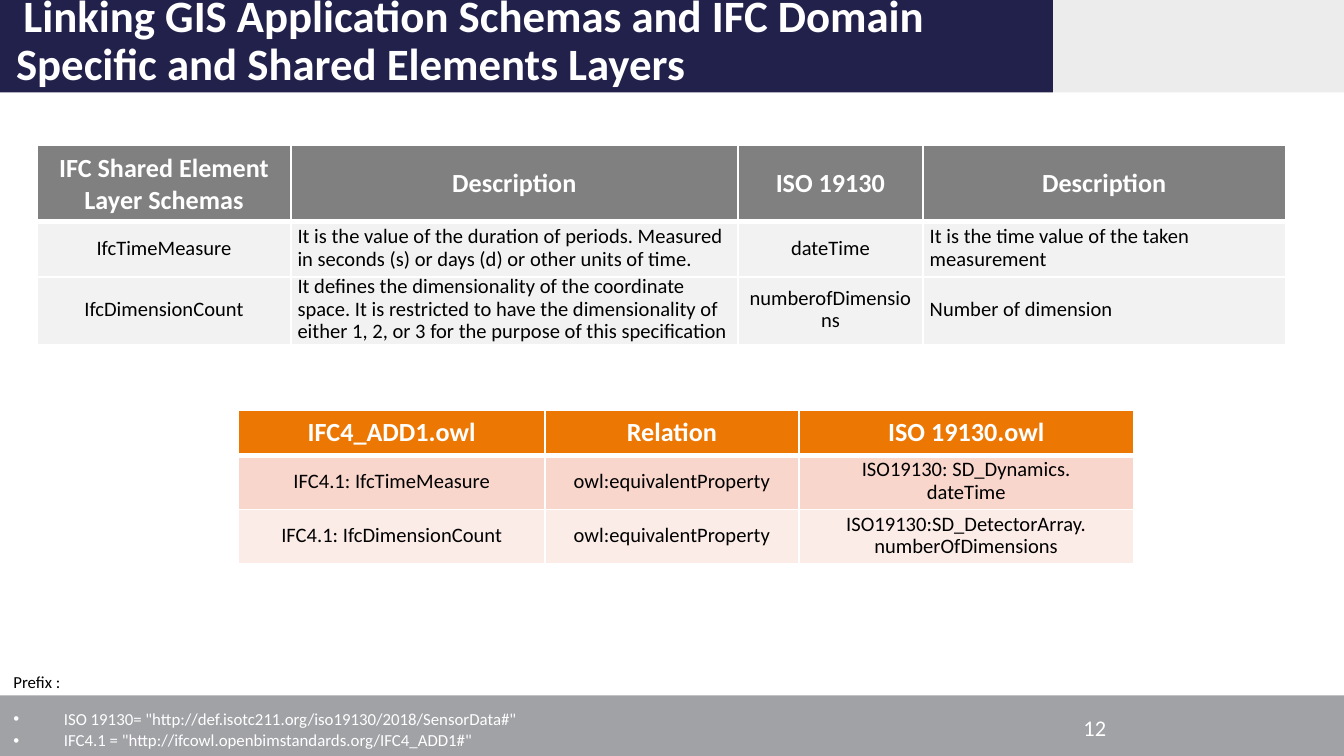
from lxml.etree import SubElement
from pptx import Presentation
from pptx.dml.color import RGBColor
from pptx.enum.shapes import MSO_SHAPE as Shape
from pptx.enum.text import MSO_ANCHOR as Anchor, MSO_AUTO_SIZE as AutoSize, PP_ALIGN as Align
from pptx.oxml.ns import qn
from pptx.util import Pt

COLORS = {
    "navy": "22214B", "pale": "ECECED", "footer": "A1A2A6", "white": "FFFFFF", "black": "000000",
    "gray": "808080", "light": "F2F2F2", "orange": "ED7703", "peach": "F8D6CC", "blush": "FCECE7",
}
FONT = "Calibri"
BANDS = [
    ((0, 372.5, 720, 32.5), "footer"),
    ((0, 0, 564, 49.5), "navy"),
    ((564, 0, 156, 49.5), "pale"),
]
SCHEMA_ROWS = [
    ["IFC Shared Element Layer Schemas", "Description", "ISO 19130", "Description"],
    ["IfcTimeMeasure",
     "It is the value of the duration of periods. Measured in seconds (s) or days (d) or other units of time.",
     "dateTime", "It is the time value of the taken measurement"],
    ["IfcDimensionCount",
     "It defines the dimensionality of the coordinate space. It is restricted to have the dimensionality "
     "of either 1, 2, or 3 for the purpose of this specification",
     "numberofDimensions", "Number of dimension"],
]
RELATION_ROWS = [
    ["IFC4_ADD1.owl", "Relation", "ISO 19130.owl"],
    ["IFC4.1: IfcTimeMeasure", "owl:equivalentProperty", "ISO19130: SD_Dynamics.\vdateTime"],
    ["IFC4.1: IfcDimensionCount", "owl:equivalentProperty",
     "ISO19130:SD_DetectorArray.\vnumberOfDimensions"],
]
PREFIXES = [
    "Prefix :",
    'ISO 19130= "http://def.isotc211.org/iso19130/2018/SensorData#"',
    'IFC4.1 = "http://ifcowl.openbimstandards.org/IFC4_ADD1#"',
]


def rgb(name):
    """Return the named palette colour."""
    return RGBColor.from_string(COLORS[name])


def style(para, size, color, bold=False, align=Align.LEFT):
    """Set the font and alignment of a paragraph."""
    para.alignment = align
    para.font.name, para.font.size, para.font.bold = FONT, Pt(size), bold
    para.font.color.rgb = rgb(color)


def place(shape, box):
    """Move a shape into a box of left, top, width and height."""
    shape.left, shape.top, shape.width, shape.height = map(Pt, box)


def add_bands(page, bands):
    """Lay the coloured bands behind everything else."""
    for box, color in bands:
        band = page.shapes.add_shape(Shape.RECTANGLE, *map(Pt, box))
        band.shadow.inherit = False
        band.fill.solid()
        band.fill.fore_color.rgb = rgb(color)
        band.line.fill.background()
        page.shapes.element.insert(2, band.element)


def fill_title(page, box, text):
    """Write the slide title in its placeholder, both lines inside the band."""
    title = page.shapes.title
    place(title, box)
    frame = title.text_frame
    frame.text = text
    frame.word_wrap, frame.auto_size = True, AutoSize.NONE
    frame.vertical_anchor = Anchor.MIDDLE
    frame.margin_left, frame.margin_top = 0, Pt(3.6)
    frame.margin_right, frame.margin_bottom = Pt(7.2), Pt(27.6)
    para = frame.paragraphs[0]
    properties = para._p.get_or_add_pPr()
    properties.set("marL", "0")
    properties.set("indent", str(Pt(4)))
    para.line_spacing = 0.9
    style(para, 24, "white", bold=True)


def add_borders(cell, widths):
    """Draw white borders on a cell, in left, right, top, bottom order."""
    properties = cell._tc.get_or_add_tcPr()
    for side, width in zip(("lnL", "lnR", "lnT", "lnB"), widths):
        line = SubElement(properties, qn(f"a:{side}"), w=str(Pt(width)))
        paint = SubElement(line, qn("a:solidFill"))
        SubElement(paint, qn("a:srgbClr"), val=COLORS["white"])


def add_grid(page, corner, widths, heights, rows, fills, left_columns=(), header_anchor=Anchor.MIDDLE):
    """Build a table with a bold header row and one fill per row."""
    box = (*corner, sum(widths), sum(heights))
    table = page.shapes.add_table(len(rows), len(widths), *map(Pt, box)).table
    table.horz_banding = False
    for column, width in zip(table.columns, widths):
        column.width = Pt(width)
    for r, (texts, height, color) in enumerate(zip(rows, heights, fills)):
        table.rows[r].height = Pt(height)
        for c, text in enumerate(texts):
            cell = table.cell(r, c)
            add_borders(cell, (1, 1, 3 if r == 1 else 1, 3 if r == 0 else 1))
            cell.fill.solid()
            cell.fill.fore_color.rgb = rgb(color)
            cell.text_frame.text = text
            para = cell.text_frame.paragraphs[0]
            if r == 0:
                cell.vertical_anchor = header_anchor
                style(para, 14, "white", bold=True, align=Align.CENTER)
            else:
                cell.vertical_anchor = Anchor.MIDDLE
                cell.margin_left = cell.margin_right = Pt(3.6)
                cell.margin_top = cell.margin_bottom = 0
                para.line_spacing = Pt(12)
                style(para, 11, "black", align=Align.LEFT if c in left_columns else Align.CENTER)


def fill_prefixes(page, box, lines):
    """Write the prefix heading and its bulleted list in the body placeholder."""
    body = page.placeholders[1]
    place(body, box)
    frame = body.text_frame
    frame.text = "\n".join(lines)
    frame.word_wrap, frame.auto_size = True, AutoSize.NONE
    frame.vertical_anchor = Anchor.TOP
    for i, para in enumerate(frame.paragraphs):
        indent = Pt(27) if i else 0
        properties = para._p.get_or_add_pPr()
        properties.set("marL", str(indent))
        properties.set("indent", str(-indent))
        para.line_spacing = 1.07
        para.space_before, para.space_after = 0, Pt(0 if i == 1 else 8)
        if i:
            SubElement(properties, qn("a:buFont"), typeface="Arial")
            SubElement(properties, qn("a:buChar"), char="•")
        else:
            SubElement(properties, qn("a:buNone"))
        style(para, 9, "white" if i else "black")


def add_page_number(page, box, number):
    """Write the page number in the footer."""
    frame = page.shapes.add_textbox(*map(Pt, box)).text_frame
    frame.text = number
    frame.word_wrap = True
    frame.vertical_anchor = Anchor.MIDDLE
    frame.margin_right = 0
    style(frame.paragraphs[0], 12, "white", align=Align.RIGHT)


def main():
    """Build the slide and save the deck."""
    deck = Presentation()
    deck.slide_width, deck.slide_height = Pt(720), Pt(405)
    page = deck.slides.add_slide(deck.slide_layouts[1])
    add_bands(page, BANDS)
    fill_title(page, (8.6, 10, 556, 49),
               "Linking GIS Application Schemas and IFC Domain Specific and Shared Elements Layers")
    add_page_number(page, (553.7, 379, 38.9, 21.6), "12")
    add_grid(page, (127.8, 219.7), (164.2, 136, 179.4), (24.3, 29, 29), RELATION_ROWS,
             ("orange", "peach", "blush"), header_anchor=Anchor.TOP)
    add_grid(page, (20, 78), (135.8, 239.5, 99.2, 194.2), (40.2, 29.6, 36), SCHEMA_ROWS,
             ("gray", "light", "light"), left_columns=(1, 3))
    fill_prefixes(page, (0, 355.7, 430.5, 50), PREFIXES)
    deck.save("out.pptx")


if __name__ == "__main__":
    main()
